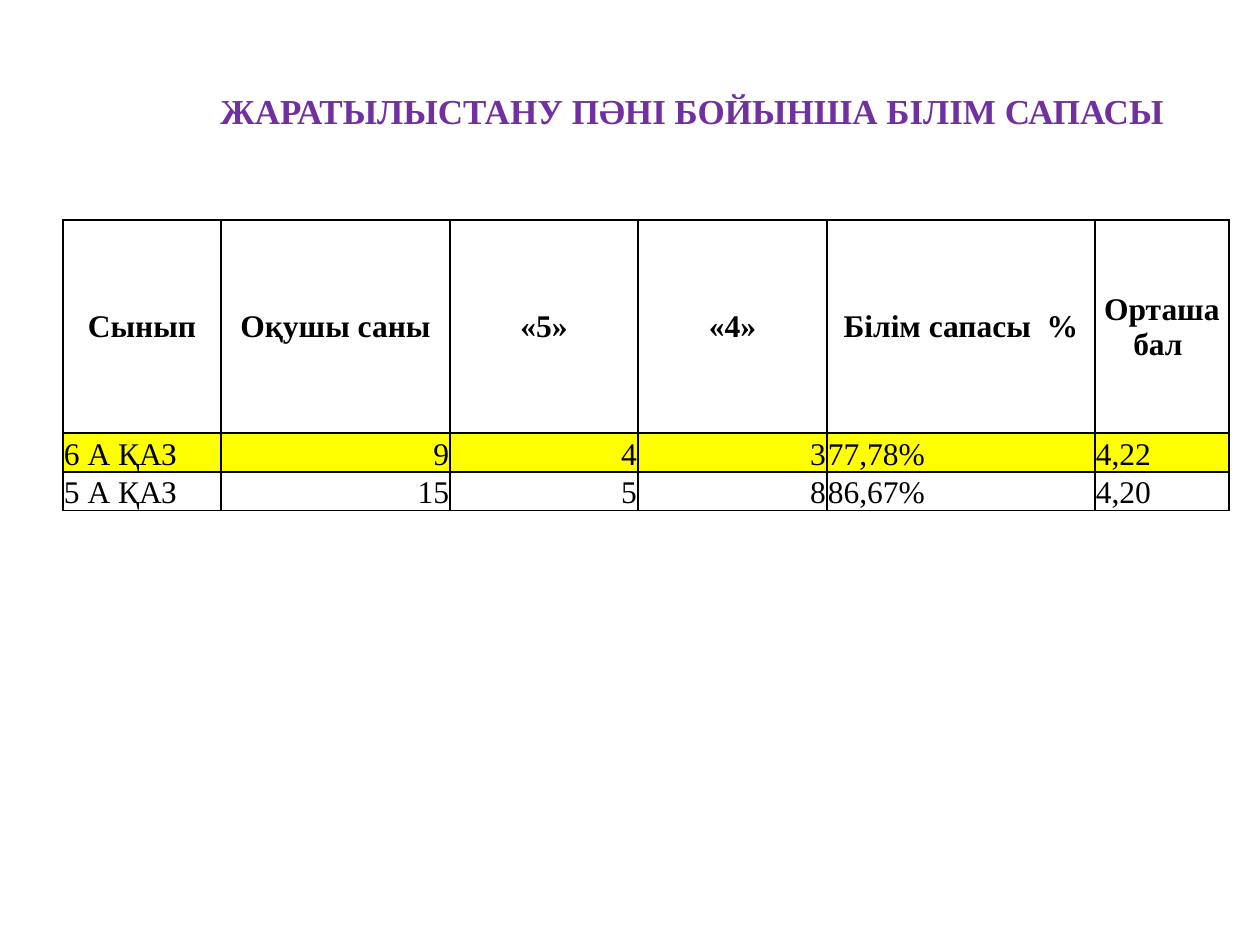
from dataclasses import dataclass

from lxml.etree import SubElement
from pptx import Presentation
from pptx.dml.color import RGBColor
from pptx.enum.text import MSO_ANCHOR as Anchor, MSO_AUTO_SIZE as AutoSize, PP_ALIGN as Align
from pptx.oxml.ns import qn
from pptx.util import Pt

PX_PER_INCH = 126
TITLE_ONLY = 5


def px(count):
    """Turn px into EMU."""
    return round(count * 914400 / PX_PER_INCH)


@dataclass(frozen=True)
class Theme:
    font: str = "Times New Roman"
    title_size: int = 20
    table_size: int = 18
    title: str = "7030A0"
    ink: str = "000000"
    paper: str = "FFFFFF"
    highlight: str = "FFFF00"
    border: int = 1


class SlideBuilder:
    def __init__(self, page, theme):
        self.page = page
        self.theme = theme

    def set_text(self, frame, text, size, color, bold, align):
        paragraph = frame.paragraphs[0]
        paragraph.text = text
        paragraph.alignment = align
        font = paragraph.font
        font.name, font.size, font.bold = self.theme.font, Pt(size), bold
        font.color.rgb = RGBColor.from_string(color)

    def title(self, text, left, top, width, height):
        box = self.page.shapes.title
        box.left, box.top, box.width, box.height = map(px, (left, top, width, height))
        frame = box.text_frame
        frame.word_wrap = True
        frame.auto_size = AutoSize.SHAPE_TO_FIT_TEXT
        frame.vertical_anchor = Anchor.TOP
        self.set_text(frame, text, self.theme.title_size, self.theme.title, True, Align.CENTER)

    def table(self, rows, left, top, widths, heights, aligns, highlighted):
        """Draw a grid whose first row is a bold, centred header."""
        table = self.page.shapes.add_table(
            len(rows), len(widths), px(left), px(top), px(sum(widths)), px(sum(heights))
        ).table
        table.first_row = table.horz_banding = False
        for column, width in zip(table.columns, widths):
            column.width = px(width)
        for row, height in zip(table.rows, heights):
            row.height = px(height)
        for r, texts in enumerate(rows):
            header = r == 0
            fill = self.theme.highlight if r == highlighted else self.theme.paper
            for c, text in enumerate(texts):
                cell = table.cell(r, c)
                cell.margin_left = cell.margin_right = cell.margin_top = px(1)
                cell.margin_bottom = 0
                cell.vertical_anchor = Anchor.MIDDLE if header else Anchor.BOTTOM
                self.set_text(cell.text_frame, text, self.theme.table_size, self.theme.ink,
                              header, Align.CENTER if header else aligns[c])
                self.borders(cell)
                cell.fill.solid()
                cell.fill.fore_color.rgb = RGBColor.from_string(fill)

    def borders(self, cell):
        properties = cell._tc.get_or_add_tcPr()
        for side in ("lnL", "lnR", "lnT", "lnB"):
            line = SubElement(properties, qn(f"a:{side}"), w=str(Pt(self.theme.border)))
            SubElement(SubElement(line, qn("a:solidFill")), qn("a:srgbClr"), val=self.theme.ink)


def main():
    deck = Presentation()
    deck.slide_width, deck.slide_height = px(1260), px(945)
    page = deck.slides.add_slide(deck.slide_layouts[TITLE_ONLY])
    builder = SlideBuilder(page, Theme())
    builder.title("ЖАРАТЫЛЫСТАНУ ПӘНІ БОЙЫНША БІЛІМ САПАСЫ", 186, 83, 1012, 55)
    builder.table(
        [
            ("Сынып", "Оқушы саны", "«5»", "«4»", "Білім сапасы  %", "Орташа бал "),
            ("6 А ҚАЗ", "9", "4", "3", "77,78%", "4,22"),
            ("5 А ҚАЗ", "15", "5", "8", "86,67%", "4,20"),
        ],
        left=63, top=220,
        widths=(158, 229, 188, 189, 268, 134),
        heights=(213, 25, 25),
        aligns=(Align.LEFT, *[Align.RIGHT] * 3, Align.LEFT, Align.LEFT),
        highlighted=1,
    )
    deck.save("out.pptx")


if __name__ == "__main__":
    main()
